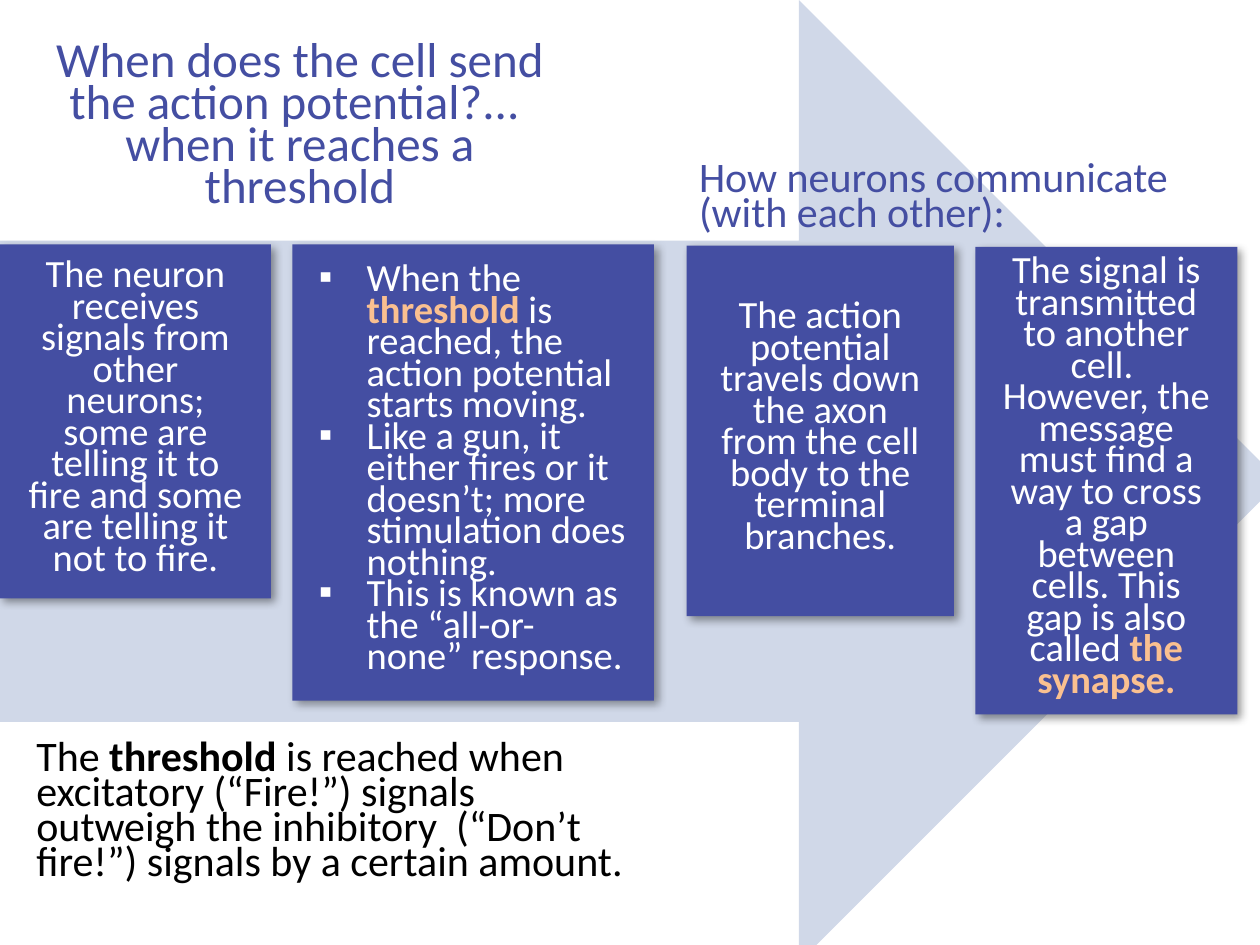
"""Build a slide on how a neuron fires and passes on its signal."""
from dataclasses import dataclass

from lxml import etree
from pptx import Presentation, util as u
from pptx.dml.color import RGBColor
from pptx.enum import shapes as es, text as et
from pptx.oxml.ns import qn

COLS, ROWS = 100, 75
BLUE, PALE, PEACH, WHITE, BLACK = "444EA2", "D0D8E8", "FAC090", "FFFFFF", "000000"
MID, TOP = et.MSO_ANCHOR.MIDDLE, et.MSO_ANCHOR.TOP
LEFT, MIDDLE = et.PP_ALIGN.LEFT, et.PP_ALIGN.CENTER

deck = Presentation()
deck.slide_width, deck.slide_height = u.Inches(10), u.Inches(7.5)
slide = deck.slides.add_slide(deck.slide_layouts[1])


@dataclass
class Box:
    """Hold a place in columns and rows of the slide grid."""
    col: float
    row: float
    wide: float
    high: float

    def size(self) -> tuple:
        """Give left, top, width and height as lengths."""
        x, y = deck.slide_width / COLS, deck.slide_height / ROWS
        return tuple(int(n) for n in (self.col * x, self.row * y, self.wide * x, self.high * y))


@dataclass
class Panel:
    """Hold one step: its place and text, with **key words** marked."""
    box: Box
    text: tuple
    list: bool = False


def color(code: str) -> RGBColor:
    """Turn a hex string into a colour."""
    return RGBColor.from_string(code)


def paint(shape, code: str) -> None:
    """Fill a shape and drop its outline."""
    shape.fill.solid()
    shape.fill.fore_color.rgb = color(code)
    shape.line.fill.background()


def place(shape, box: Box) -> None:
    """Move a placeholder to a box."""
    shape.left, shape.top, shape.width, shape.height = box.size()


def shade(shape) -> None:
    """Cast a soft shadow to the lower right."""
    shape.shadow.inherit = False
    glow = shape._element.spPr.find(qn("a:effectLst"))
    cast = etree.SubElement(glow, qn("a:outerShdw"), blurRad=str(u.Pt(5)), dist=str(u.Pt(3)),
                            dir="2700000", algn="tl", rotWithShape="0")
    tint = etree.SubElement(cast, qn("a:srgbClr"), val=BLACK)
    etree.SubElement(tint, qn("a:alpha"), val="40000")


def mark(para, sign: str, inset: float) -> None:
    """Set the bullet sign and hanging indent, or none."""
    props = para._p.get_or_add_pPr()
    props.set("marL", str(u.Inches(inset)))
    props.set("indent", str(-u.Inches(inset)))
    if sign:
        etree.SubElement(props, qn("a:buChar"), char=sign)
    else:
        etree.SubElement(props, qn("a:buNone"))


def write(shape, paras: tuple, size: int, lead: int, ink: str, key: str = "",
          align=LEFT, anchor=TOP, pad: float = 0, sign: str = "", inset: float = 0,
          fit=et.MSO_AUTO_SIZE.NONE) -> None:
    """Write paragraphs, with each **key word** bold and in the key colour."""
    frame = shape.text_frame
    frame.word_wrap, frame.auto_size, frame.vertical_anchor = True, fit, anchor
    if pad:
        frame.margin_left = frame.margin_right = u.Inches(pad)
        frame.margin_top = frame.margin_bottom = u.Inches(pad)
    for i, words in enumerate(paras):
        para = frame.add_paragraph() if i else frame.paragraphs[0]
        para.alignment, para.line_spacing = align, u.Pt(lead)
        para.space_before = para.space_after = u.Pt(0)
        mark(para, sign, inset)
        for j, part in enumerate(words.split("**")):
            for k, line in enumerate(part.split("\n")):
                if k:
                    para.add_line_break()
                if line:
                    run = para.add_run()
                    run.text, font = line, run.font
                    font.name, font.size, font.bold = "Calibri", u.Pt(size), j % 2 == 1
                    font.color.rgb = color(key if key and j % 2 else ink)


def draw(panel: Panel) -> None:
    """Draw a step, using the body placeholder for the list."""
    if panel.list:
        shape = slide.placeholders[1]
        place(shape, panel.box)
        look = dict(sign="▪", inset=0.38)
    else:
        shape = slide.shapes.add_shape(es.MSO_SHAPE.RECTANGLE, *panel.box.size())
        look = dict(align=MIDDLE)
    paint(shape, BLUE)
    shade(shape)
    write(shape, panel.text, 22, 18, WHITE, key=PEACH, anchor=MID, pad=0.21, **look)


def note(box: Box, words: str, ink: str) -> None:
    """Add a plain text box."""
    shape = slide.shapes.add_textbox(*box.size())
    write(shape, (words,), 24, 20, ink, fit=et.MSO_AUTO_SIZE.SHAPE_TO_FIT_TEXT)


PANELS = (
    Panel(Box(0, 19.4, 21.5, 28.1), (
        "The neuron receives signals from other neurons; some are telling it to fire "
        "and some are telling it not to fire.",)),
    Panel(Box(23.2, 19.4, 28.7, 36.2), (
        "When the **threshold** is reached, the action potential starts moving.",
        "Like a gun, it either fires or it doesn’t; more stimulation does nothing.",
        "This is known as the “all-or-none” response."), list=True),
    Panel(Box(54.5, 19.5, 21.2, 29.4), (
        "The action potential travels down the axon from the cell body to the "
        "terminal branches.",)),
    Panel(Box(77.4, 19.6, 20.8, 37.1), (
        "The signal is transmitted to another cell.  However, the message must find a way "
        "to cross a gap between cells. This gap is also called **the synapse.**",)),
)


def main() -> None:
    """Build and save the slide."""
    arrow = slide.shapes.add_shape(es.MSO_SHAPE.RIGHT_ARROW, *Box(0, 0, 101.6, 76.4).size())
    paint(arrow, PALE)
    arrow.shadow.inherit = False
    slide.shapes._spTree.insert(2, arrow._element)
    title = slide.shapes.title
    place(title, Box(1.9, 2.6, 43.8, 15.3))
    write(title, ("When does the cell send the action potential?...  when it reaches a threshold",),
          28, 24, BLUE, align=MIDDLE, anchor=MID)
    for panel in PANELS:
        draw(panel)
    note(Box(54.5, 12.7, 40.7, 6.6), "How neurons communicate\n(with each other):", BLUE)
    note(Box(1.9, 58.6, 50, 12.4), "The **threshold **is reached when excitatory (“Fire!”) signals "
         "outweigh the inhibitory  (“Don’t fire!”) signals by a certain amount.", BLACK)
    deck.save("out.pptx")


if __name__ == "__main__":
    main()
